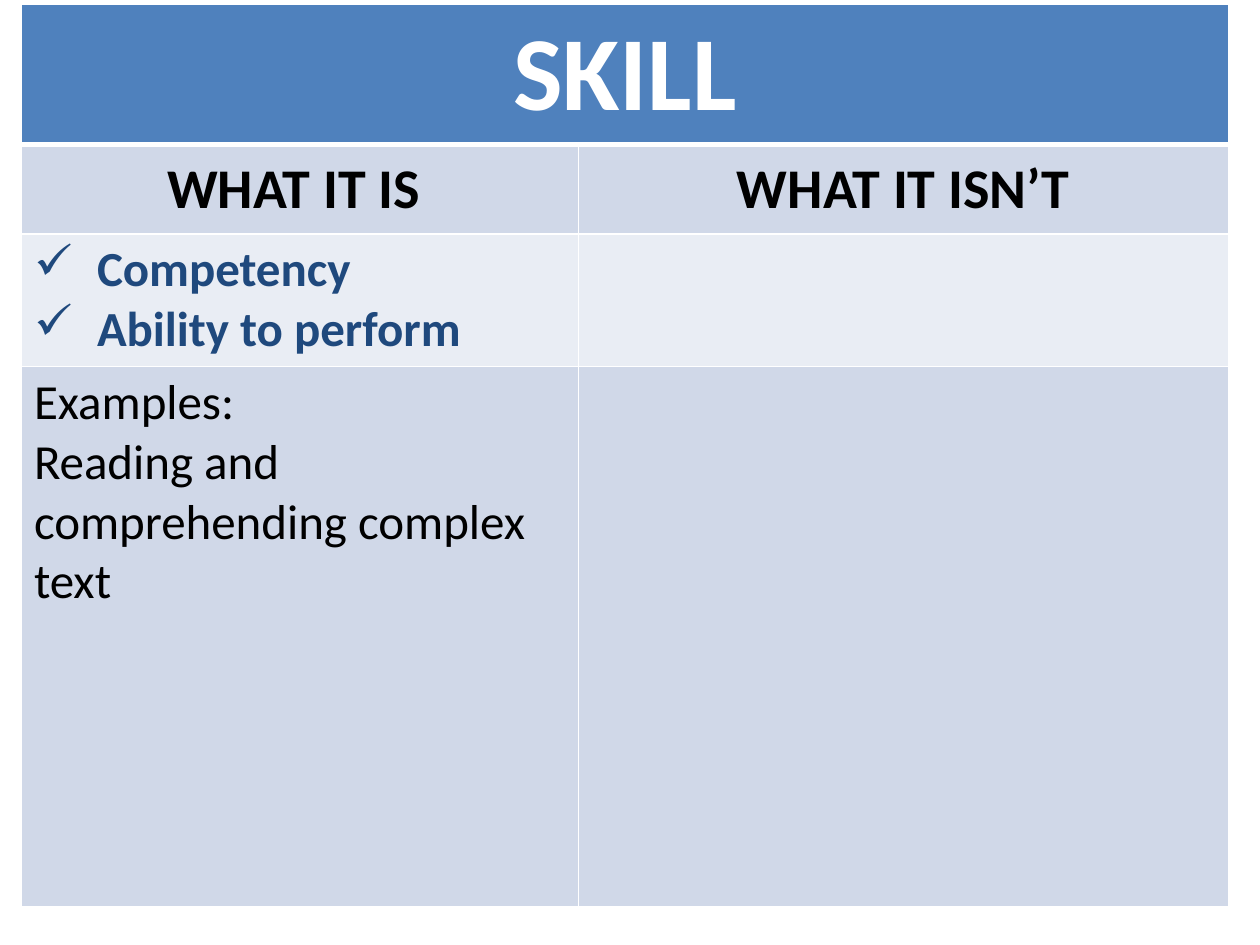
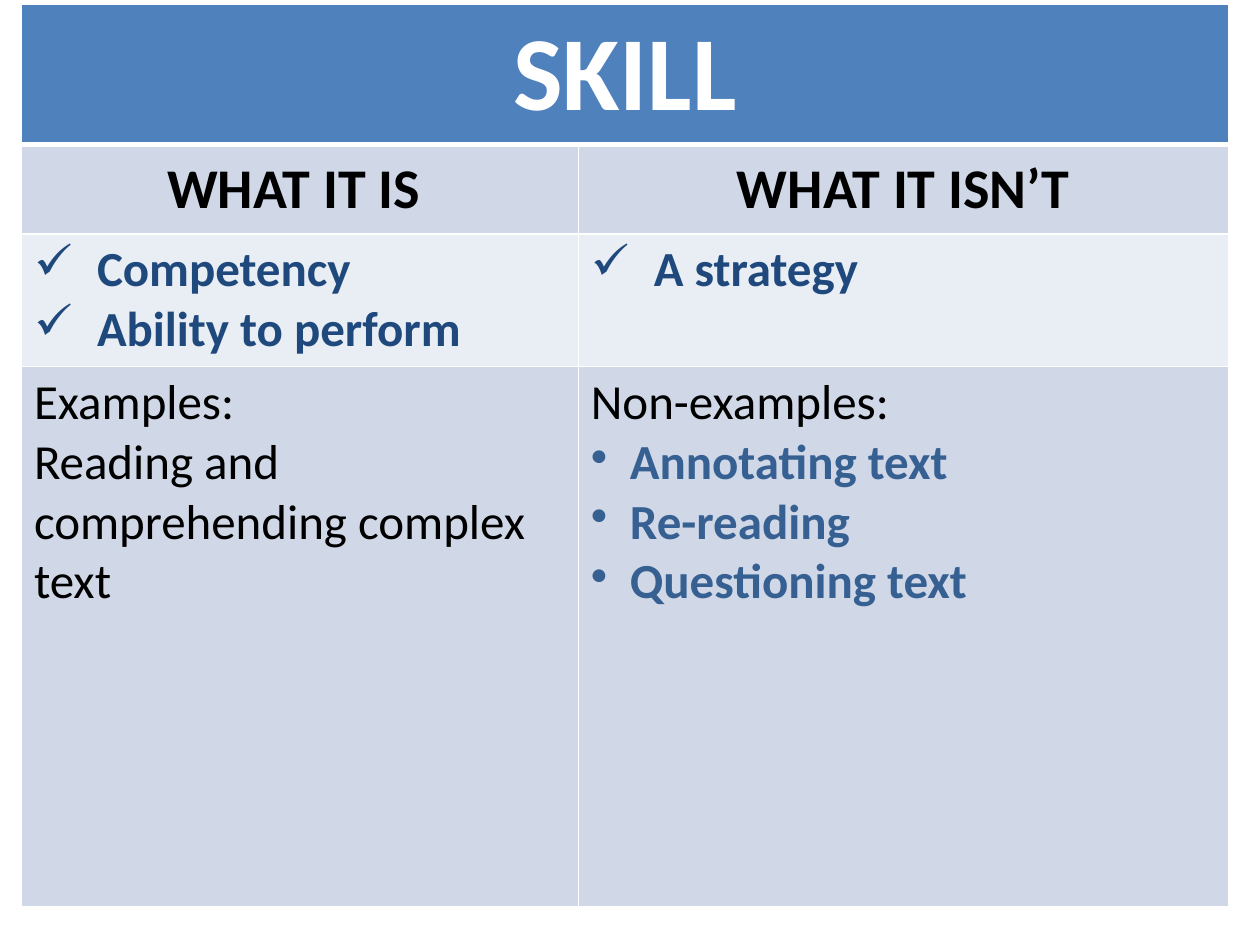
from lxml.etree import SubElement
from pptx import Presentation
from pptx.dml.color import RGBColor
from pptx.enum.text import MSO_ANCHOR, PP_ALIGN
from pptx.oxml.ns import qn
from pptx.util import Emu, Inches, Pt

FONT = "Calibri"
COLUMNS = [4.42, 5.16]
ROWS = [0.93, 0.71, 0.88, 4.29]
LEFT, TOP = 0.17, 0.03
FILLS = ["4F81BD", "D0D8E8", "E9EDF4", "D0D8E8"]
BORDER, THIN, THICK = "FFFFFF", 1, 3

# style: size, bold, colour, alignment, bullet, indent
STYLES = {
    "title": (60, True, "FFFFFF", PP_ALIGN.CENTER, None, 0),
    "heading": (32, True, "000000", PP_ALIGN.CENTER, None, 0),
    "check": (28, True, "1F497D", PP_ALIGN.LEFT, "✓", 0.5),
    "body": (28, False, "000000", PP_ALIGN.LEFT, None, 0),
    "dot": (28, True, "376092", PP_ALIGN.LEFT, "•", 0.31),
}

TITLE = [("title", "SKILL")]
HEADINGS = [[("heading", "WHAT IT IS ")], [("heading", "WHAT IT ISN’T")]]
TRAITS = [("check", "Competency"), ("check", "Ability to perform")]
EXAMPLES = [("body", "Examples:"),
            ("body", "Reading and comprehending complex text")]
NON_TRAITS = [("check", "A strategy")]
NON_EXAMPLES = [("body", "Non-examples:"), ("dot", "Annotating text"),
                ("dot", "Re-reading"), ("dot", "Questioning text")]

# The right-hand column of each slide: traits, then examples
RIGHT_COLUMNS = [([], []), (NON_TRAITS, NON_EXAMPLES)]


def rgb(color):
    return RGBColor.from_string(color)


def set_borders(cell, top, bottom):
    properties = cell._tc.get_or_add_tcPr()
    for side, width in (("L", THIN), ("R", THIN), ("T", top), ("B", bottom)):
        line = SubElement(properties, qn(f"a:ln{side}"), w=str(Pt(width)))
        SubElement(SubElement(line, qn("a:solidFill")),
                   qn("a:srgbClr"), val=BORDER)


def set_bullet(paragraph, bullet, indent):
    properties = paragraph._p.get_or_add_pPr()
    properties.set("marL", str(Inches(indent)))
    properties.set("indent", str(-Inches(indent)))
    SubElement(properties, qn("a:buChar"), char=bullet)


def write(cell, lines):
    frame = cell.text_frame
    for index, (style, text) in enumerate(lines):
        size, bold, color, alignment, bullet, indent = STYLES[style]
        paragraph = frame.add_paragraph() if index else frame.paragraphs[0]
        paragraph.text = text
        paragraph.alignment = alignment
        if bullet:
            set_bullet(paragraph, bullet, indent)
        font = paragraph.runs[0].font
        font.name, font.size, font.bold = FONT, Pt(size), bold
        font.color.rgb = rgb(color)


def add_skill_table(slide, content):
    table = slide.shapes.add_table(
        len(ROWS), len(COLUMNS), Inches(LEFT), Inches(TOP),
        Inches(sum(COLUMNS)), Inches(sum(ROWS))).table
    for column, width in zip(table.columns, COLUMNS):
        column.width = Inches(width)
    for row, height in zip(table.rows, ROWS):
        row.height = Inches(height)
    table.cell(0, 0).merge(table.cell(0, len(COLUMNS) - 1))

    for r, row_content in enumerate(content):
        for c, lines in enumerate(row_content):
            cell = table.cell(r, c)
            set_borders(cell, THICK if r == 1 else THIN,
                        THICK if r == 0 else THIN)
            cell.fill.solid()
            cell.fill.fore_color.rgb = rgb(FILLS[r])
            if r == 1:
                cell.vertical_anchor = MSO_ANCHOR.MIDDLE
            write(cell, lines)


def main():
    deck = Presentation()
    deck.slide_width, deck.slide_height = Inches(10), Inches(7.5)
    blank = deck.slide_layouts.get_by_name("Blank")
    for right_traits, right_examples in RIGHT_COLUMNS:
        add_skill_table(deck.slides.add_slide(blank), [
            [TITLE, []],
            HEADINGS,
            [TRAITS, right_traits],
            [EXAMPLES, right_examples],
        ])
    deck.save("out.pptx")


if __name__ == "__main__":
    main()
